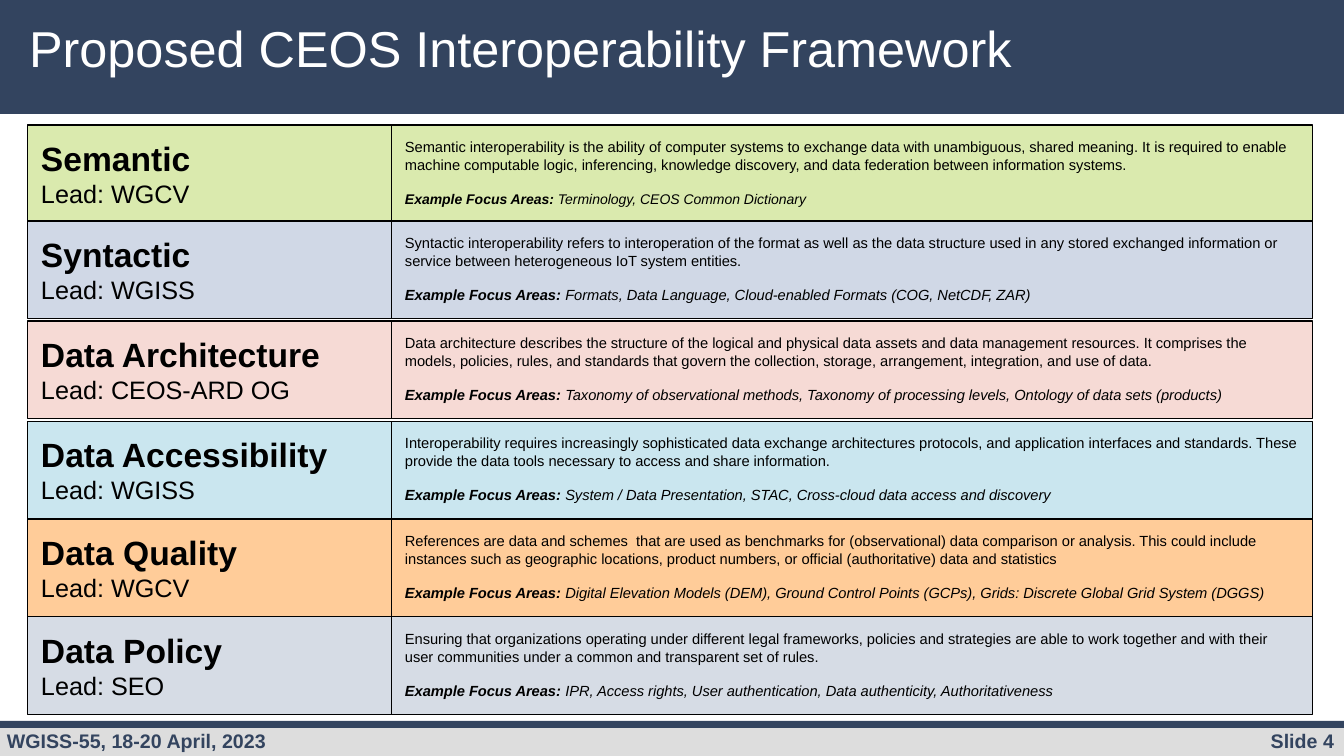
from pptx import Presentation
from pptx import util as u
from pptx.dml.color import RGBColor
from pptx.enum import shapes, text

PX = 914400 / 100.8
NAVY, BLACK, WHITE = "33445F", "000000", "FFFFFF"


def px(*lengths):
    return [u.Emu(round(n * PX)) for n in lengths]


def style(font, size, color, bold=False, italic=False):
    font.name, font.size = "Arial", u.Pt(size)
    font.bold, font.italic = bold, italic
    font.color.rgb = RGBColor.from_string(color)


deck = Presentation()
deck.slide_width, deck.slide_height = px(1344, 756)
slide = deck.slides.add_slide(deck.slide_layouts[5])

# Header and footer bands
for top, height, color in [(0, 114, NAVY), (725, 31, "DDDDDD"), (721, 7, NAVY)]:
    band = slide.shapes.add_shape(shapes.MSO_SHAPE.RECTANGLE, *px(0, top, 1344, height))
    band.shadow.inherit = False
    band.fill.solid()
    band.fill.fore_color.rgb = RGBColor.from_string(color)
    band.line.fill.background()

# Footer texts
for wording, left, width, align in [
    ("WGISS-55, 18-20 April, 2023", -3, 543, text.PP_ALIGN.LEFT),
    ("Slide 4", 1131, 213, text.PP_ALIGN.RIGHT),
]:
    footer = slide.shapes.add_textbox(*px(left, 724, width, 34)).text_frame
    footer.word_wrap = True
    footer.text = wording
    footer.paragraphs[0].alignment = align
    style(footer.paragraphs[0].font, 14, NAVY, bold=True)

# Title, brought in front of the header band
title = slide.shapes.title
slide.shapes._spTree.append(title._element)
title.left, title.top, title.width, title.height = px(19, 19, 1035, 86)
title.text_frame.text = "Proposed CEOS Interoperability Framework"
title.text_frame.vertical_anchor = text.MSO_ANCHOR.TOP
title.text_frame.auto_size = text.MSO_AUTO_SIZE.NONE
heading = title.text_frame.paragraphs[0]
heading.alignment = text.PP_ALIGN.LEFT
heading.line_spacing = 0.9
style(heading.font, 36, WHITE)

# Framework rows: top, fill, factor, lead, description, focus areas, focus size
rows = [
    (125, "DAEAAE", "Semantic", "WGCV",
     "Semantic interoperability is the ability of computer systems to exchange data with "
     "unambiguous, shared meaning. It is required to enable machine computable logic, "
     "inferencing, knowledge discovery, and data federation between information systems.",
     "Terminology, CEOS Common Dictionary", 10),
    (221, "D0D8E6", "Syntactic", "WGISS",
     "Syntactic interoperability refers to interoperation of the format as well as the data "
     "structure used in any stored exchanged information or service between heterogeneous "
     "IoT system entities.",
     "Formats, Data Language, Cloud-enabled Formats (COG, NetCDF, ZAR)", 10.5),
    (321, "F6DAD5", "Data Architecture", "CEOS-ARD OG",
     "Data architecture describes the structure of the logical and physical data assets and "
     "data management resources. It comprises the models, policies, rules, and standards that "
     "govern the collection, storage, arrangement, integration, and use of data.",
     "Taxonomy of observational methods, Taxonomy of processing levels, "
     "Ontology of data sets (products)", 10.5),
    (421, "CAE6EF", "Data Accessibility", "WGISS",
     "Interoperability requires increasingly sophisticated data exchange architectures "
     "protocols, and application interfaces and standards. These provide the data tools "
     "necessary to access and share information.",
     "System / Data Presentation, STAC, Cross-cloud data access and discovery", 10.5),
    (519, "FFCC99", "Data Quality", "WGCV",
     "References are data and schemes  that are used as benchmarks for (observational) data "
     "comparison or analysis. This could include instances such as geographic locations, "
     "product numbers, or official (authoritative) data and statistics",
     "Digital Elevation Models (DEM), Ground Control Points (GCPs), "
     "Grids: Discrete Global Grid System (DGGS)", 10.5),
    (617, "D6DCE5", "Data Policy", "SEO",
     "Ensuring that organizations operating under different legal frameworks, policies and "
     "strategies are able to work together and with their user communities under a common and "
     "transparent set of rules.",
     "IPR, Access rights, User authentication, Data authenticity, Authoritativeness", 10.5),
]

for top, fill, factor, lead, description, areas, focus_size in rows:
    frames = []
    for left, width in [(28, 364), (392, 921)]:
        cell = slide.shapes.add_shape(shapes.MSO_SHAPE.RECTANGLE, *px(left, top, width, 98))
        cell.shadow.inherit = False
        cell.fill.solid()
        cell.fill.fore_color.rgb = RGBColor.from_string(fill)
        cell.line.color.rgb = RGBColor.from_string(BLACK)
        cell.line.width = u.Pt(0.75)
        frame = cell.text_frame
        frame.word_wrap = True
        frame.vertical_anchor = text.MSO_ANCHOR.TOP
        frame.margin_left, frame.margin_top, frame.margin_right, frame.margin_bottom = px(13, 13, 13, 13)
        frame.add_paragraph()
        for paragraph in frame.paragraphs:
            paragraph.alignment = text.PP_ALIGN.LEFT
        frames.append(frame)

    # Factor and its lead
    factor_line, lead_line = frames[0].paragraphs
    factor_line.text, lead_line.text = factor, f"Lead: {lead}"
    style(factor_line.font, 24, BLACK, bold=True)
    style(lead_line.font, 18, BLACK)

    # Description and example focus areas
    description_line, focus_line = frames[1].paragraphs
    description_line.text = description
    style(description_line.font, 10.5, BLACK)
    focus_line.space_before = u.Pt(12)
    for wording, bold in [("Example Focus Areas: ", True), (areas, False)]:
        run = focus_line.add_run()
        run.text = wording
        style(run.font, focus_size, BLACK, bold=bold, italic=True)

deck.save("out.pptx")
